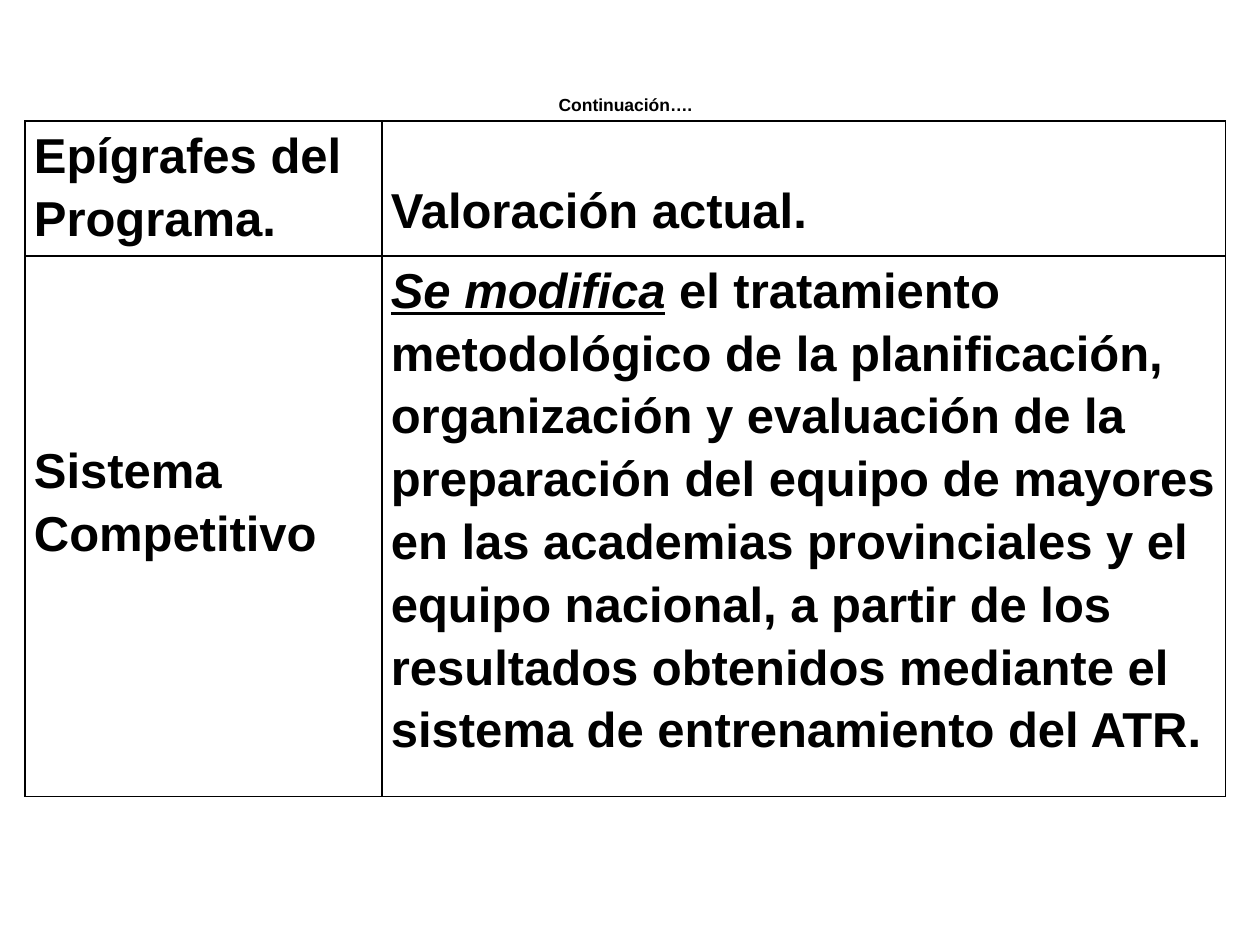
from lxml import etree
from pptx import Presentation
from pptx.dml.color import RGBColor
from pptx.enum import text
from pptx.oxml import ns
from pptx.util import Pt

BLACK = RGBColor(0x00, 0x00, 0x00)
WHITE = RGBColor(0xFF, 0xFF, 0xFF)
LEFT, WIDTH = 14.4, 686


def write(paragraph, pieces, size):
    """Add (wording, extra format) pieces as bold Arial runs."""
    paragraph.line_spacing = 1.15
    for wording, extra in pieces:
        run = paragraph.add_run()
        run.text = wording
        run.font.color.rgb = BLACK
        style = {"name": "Arial", "size": Pt(size), "bold": True, **extra}
        for key, value in style.items():
            setattr(run.font, key, value)


def add_borders(cell):
    """Draw a thin black line on all four sides of the cell."""
    properties = cell._tc.get_or_add_tcPr()
    for position, side in enumerate(("lnL", "lnR", "lnT", "lnB")):
        line = etree.Element(ns.qn(f"a:{side}"), w=str(Pt(1)))
        fill = etree.SubElement(line, ns.qn("a:solidFill"))
        etree.SubElement(fill, ns.qn("a:srgbClr"), val=str(BLACK))
        properties.insert(position, line)


deck = Presentation()
deck.slide_width, deck.slide_height = Pt(720), Pt(540)
slide = deck.slides.add_slide(deck.slide_layouts[6])

# Programme table: each cell holds its top margin and its text pieces
rows = [
    [
        (0, [("Epígrafes del Programa.", {})]),
        (31.5, [("Valoración actual.", {})]),
    ],
    [
        (103, [("Sistema Competitivo", {})]),
        (0, [
            ("Se modifica", {"italic": True, "underline": True}),
            (" el tratamiento metodológico de la planificación, organización "
             "y evaluación de la preparación del equipo de mayores en las "
             "academias provinciales y el equipo nacional, a partir de los "
             "resultados obtenidos mediante el sistema de entrenamiento "
             "del ATR.", {}),
        ]),
    ],
]
column_widths = [204, 482]
row_heights = [77, 309]

programme = slide.shapes.add_table(
    2, 2, Pt(LEFT), Pt(69.2), Pt(WIDTH), Pt(sum(row_heights))
).table
programme.first_row = programme.horz_banding = False
for column, width in zip(programme.columns, column_widths):
    column.width = Pt(width)
for row, height, contents in zip(programme.rows, row_heights, rows):
    row.height = Pt(height)
    for cell, (top, pieces) in zip(row.cells, contents):
        margins = {"left": 5, "right": 5, "top": top, "bottom": 0}
        for side, margin in margins.items():
            setattr(cell, f"margin_{side}", Pt(margin))
        cell.fill.solid()
        cell.fill.fore_color.rgb = WHITE
        write(cell.text_frame.paragraphs[0], pieces, 28)
        add_borders(cell)

# Continuation heading
heading = slide.shapes.add_textbox(Pt(LEFT), Pt(48.2), Pt(WIDTH), Pt(21)).text_frame
heading.word_wrap = True
heading.paragraphs[0].alignment = text.PP_ALIGN.CENTER
write(heading.paragraphs[0], [("Continuación….", {})], 10)

deck.save("out.pptx")
